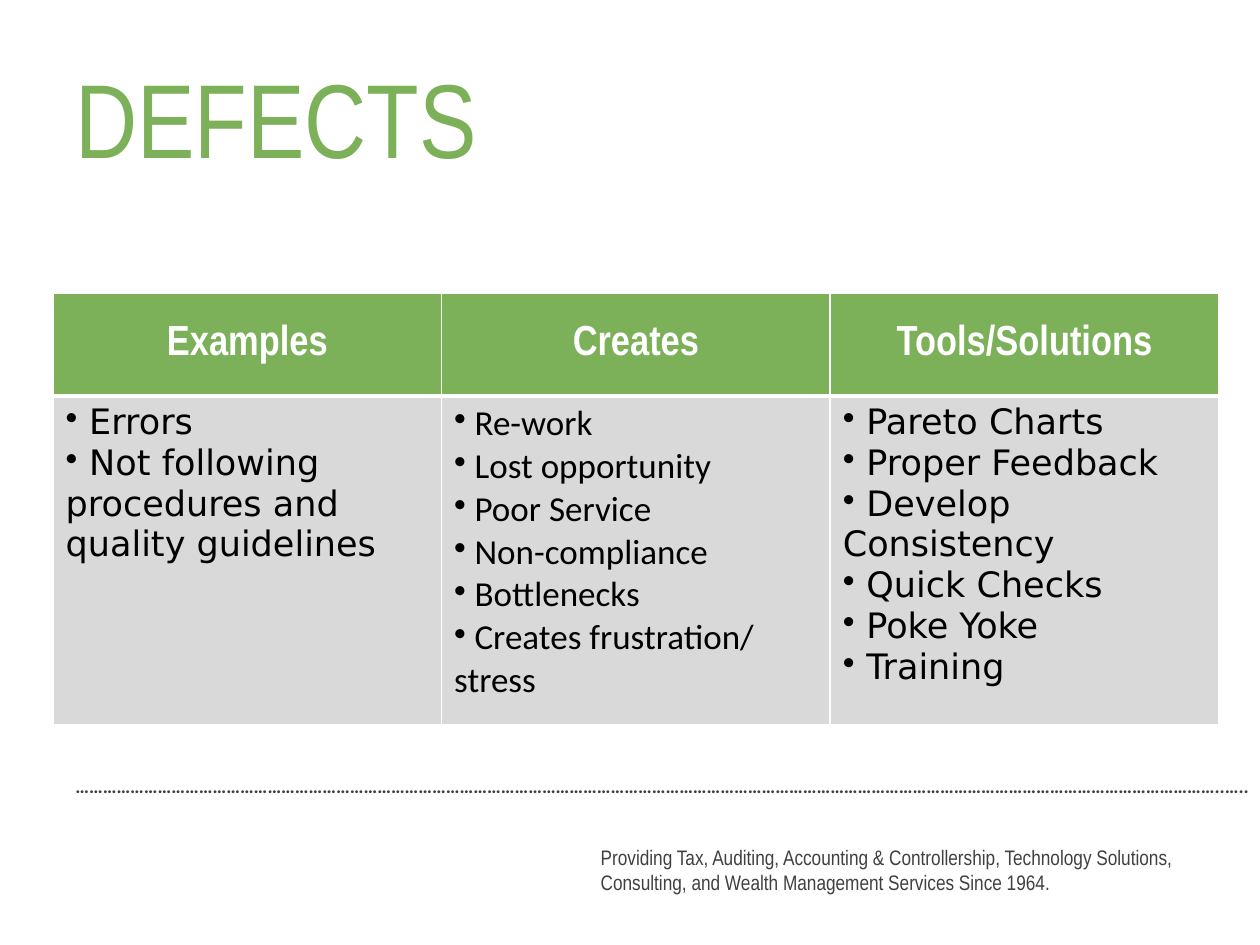
from lxml.etree import SubElement
from pptx import Presentation
from pptx.dml.color import RGBColor
from pptx.enum.text import MSO_ANCHOR, PP_ALIGN
from pptx.oxml.ns import qn
from pptx.util import Cm, Pt

HUES = {"green": "7CB059", "grey": "D9D9D9", "dark": "404040",
        "white": "FFFFFF", "black": "000000"}

DOTS = "……………………………………………………………………………………………………………………………………………………………………………………………………………………………..….."
CLAIM = ("Providing Tax, Auditing, Accounting & Controllership, Technology Solutions, "
         "Consulting, and Wealth Management Services Since 1964.")

WASTE = [
    ("Examples", "DejaVu Sans",
     ["Errors", "Not following procedures and quality guidelines"]),
    ("Creates", "Calibri",
     ["Re-work", "Lost opportunity", "Poor Service", "Non-compliance",
      "Bottlenecks", "Creates frustration/ stress"]),
    ("Tools/Solutions", "DejaVu Sans",
     ["Pareto Charts", "Proper Feedback", "Develop Consistency",
      "Quick Checks", "Poke Yoke", "Training"]),
]


def write(frame, lines, size=12, face="Arial Narrow", hue="dark", bold=False,
          align=PP_ALIGN.LEFT, mark=None):
    """Fill a text frame with one paragraph per line in a single format."""
    for i, line in enumerate(lines):
        para = frame.paragraphs[0] if i == 0 else frame.add_paragraph()
        para.alignment = align
        if mark:
            props = para._p.get_or_add_pPr()
            props.set("marL", "0")
            props.set("indent", "0")
            SubElement(props, qn("a:buChar")).set("char", mark)
        run = para.add_run()
        run.text = f" {line}" if mark else line
        font = run.font
        font.size, font.name, font.bold = Pt(size), face, bold
        font.color.rgb = RGBColor.from_string(HUES[hue])


class Deck:
    """Hold the style and the current slide."""

    def __init__(self, wide, high):
        self.show = Presentation()
        self.show.slide_width, self.show.slide_height = Cm(wide), Cm(high)
        self.slide = self.show.slides.add_slide(self.show.slide_layouts[6])

    def text(self, box, line, anchor=MSO_ANCHOR.MIDDLE, **style):
        frame = self.slide.shapes.add_textbox(*map(Cm, box)).text_frame
        frame.word_wrap = True
        frame.vertical_anchor = anchor
        write(frame, [line], **style)

    def cell(self, cell, fill, base=1):
        props = cell._tc.get_or_add_tcPr()
        for side, width in zip("LRTB", (1, 1, 1, base)):
            edge = SubElement(props, qn(f"a:ln{side}"), w=str(Pt(width)))
            solid = SubElement(edge, qn("a:solidFill"))
            SubElement(solid, qn("a:srgbClr"), val=HUES["white"])
        cell.fill.solid()
        cell.fill.fore_color.rgb = RGBColor.from_string(HUES[fill])

    def table(self, box, rows, data):
        grid = self.slide.shapes.add_table(len(rows), len(data), *map(Cm, box)).table
        for row, high in zip(grid.rows, rows):
            row.height = Cm(high)
        for col, (head, face, items) in enumerate(data):
            top, body = grid.cell(0, col), grid.cell(1, col)
            self.cell(top, "green", base=3)
            top.vertical_anchor = MSO_ANCHOR.MIDDLE
            write(top.text_frame, [head], size=24, hue="white", bold=True,
                  align=PP_ALIGN.CENTER)
            self.cell(body, "grey")
            write(body.text_frame, items, size=20, face=face, hue="black", mark="•")

    def save(self):
        self.show.save("out.pptx")


def main():
    deck = Deck(25.4, 19.05)
    deck.text((1.27, 15.49, 24.56, 0.74), DOTS, anchor=MSO_ANCHOR.TOP,
              size=11, face="Calibri", bold=True)
    deck.text((11.86, 16.59, 13.13, 1.88), CLAIM)
    deck.table((1.07, 5.92, 23.5, 8.69), (2.06, 6.63), WASTE)
    deck.text((1.27, 0.76, 22.86, 3.18), "DEFECTS", size=60, hue="green")
    deck.save()


if __name__ == "__main__":
    main()
